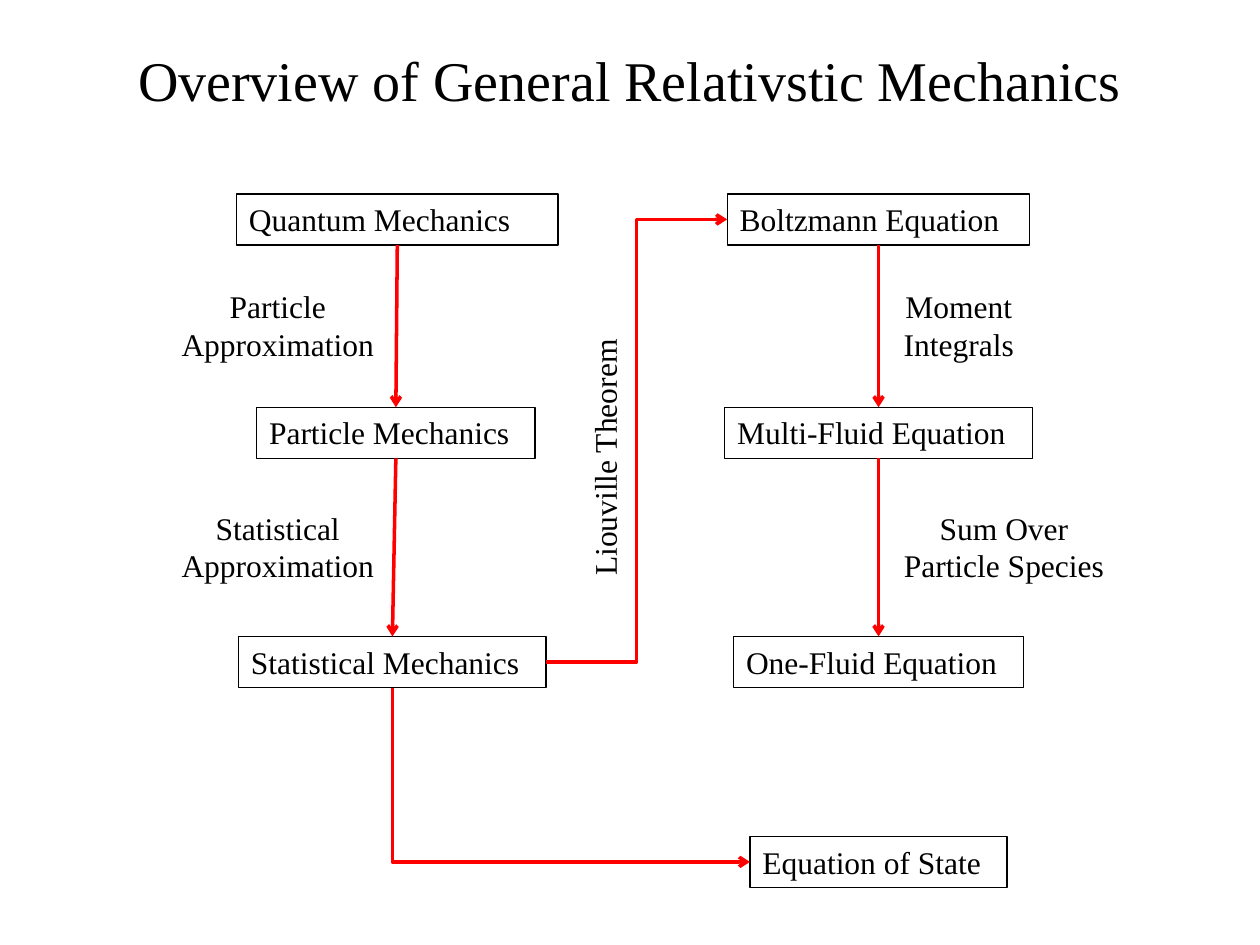
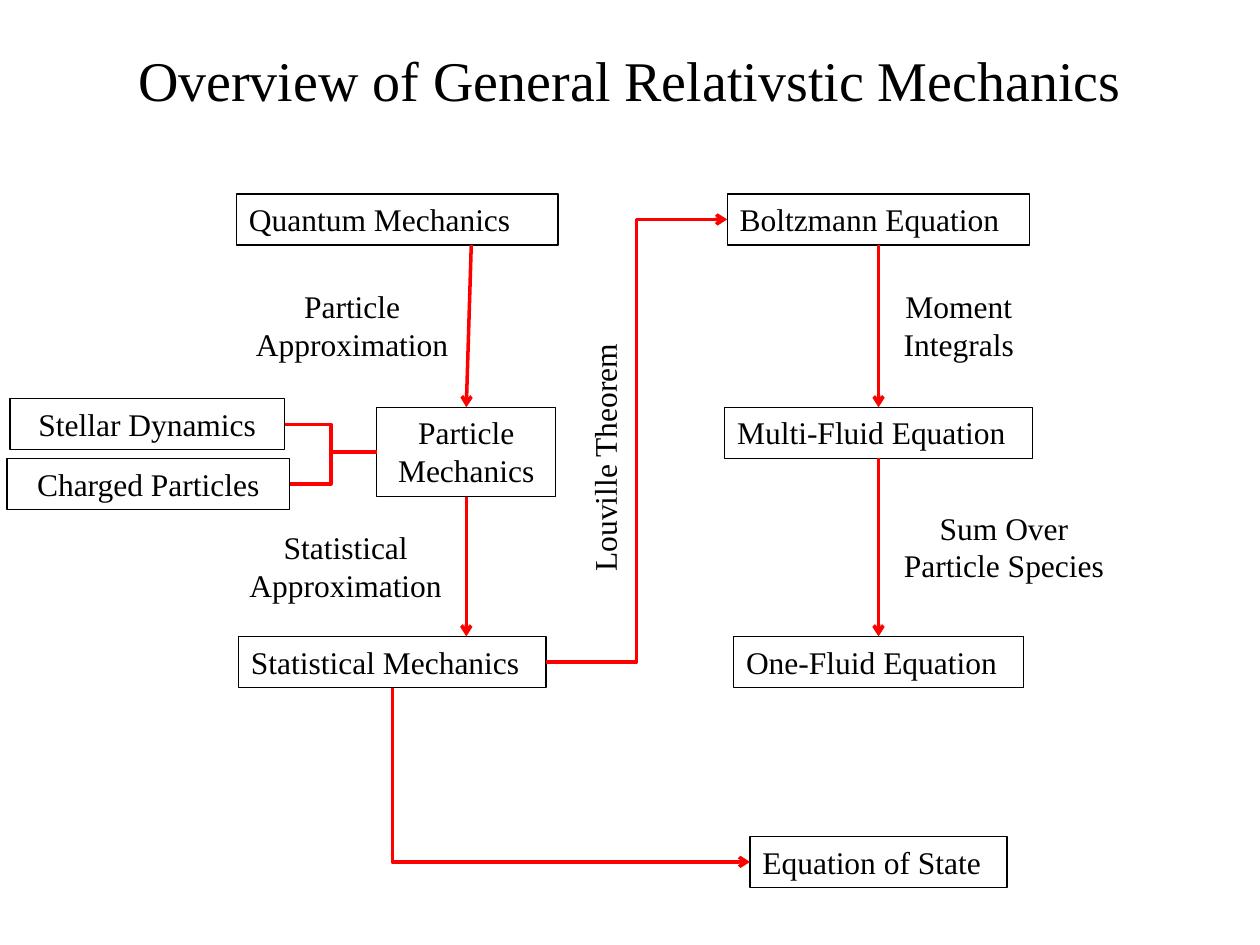
from dataclasses import dataclass

from lxml import etree
from pptx import Presentation, util as u
from pptx.dml.color import RGBColor
from pptx.enum import shapes, text
from pptx.oxml.ns import qn


@dataclass(frozen=True)
class Theme:
    ink: RGBColor = RGBColor(0, 0, 0)
    paper: RGBColor = RGBColor(255, 255, 255)
    arrow: RGBColor = RGBColor(255, 0, 0)
    font: str = "Times New Roman"
    title_size: u.Pt = u.Pt(32)
    body_size: u.Pt = u.Pt(18)
    border: u.Pt = u.Pt(0.75)
    arrow_width: u.Pt = u.Pt(2)


THEME = Theme()
TITLE = "Overview of General Relativstic Mechanics"
LEFT, CENTER = text.PP_ALIGN.LEFT, text.PP_ALIGN.CENTER

# Vertical grid and column centres, in centimetres
ROWS = dict(first=3.91, second=8.21, third=12.83, state=16.86)
NOTES = dict(upper=5.66, lower=10.13)
EQUATIONS_X = 17.71
ONE_LINE, TWO_LINES = 1.03, 1.8


def set_all(target, values):
    for name, value in values.items():
        setattr(target, name, value)


def write(frame, words, size, align, anchor=text.MSO_ANCHOR.TOP):
    frame.text = words
    set_all(frame, dict(word_wrap=True, auto_size=text.MSO_AUTO_SIZE.NONE,
                        vertical_anchor=anchor))
    for paragraph in frame.paragraphs:
        paragraph.alignment = align
        set_all(paragraph.font, dict(name=THEME.font, size=size, bold=False))
        paragraph.font.color.rgb = THEME.ink


def paint(shape, filled):
    if filled:
        shape.fill.solid()
        shape.fill.fore_color.rgb = THEME.paper
    else:
        shape.fill.background()


def add_title(slide):
    title = slide.shapes.title
    set_all(title, dict(left=u.Cm(1.27), top=u.Cm(0),
                        width=u.Cm(22.86), height=u.Cm(3.18)))
    write(title.text_frame, TITLE, THEME.title_size, CENTER, text.MSO_ANCHOR.MIDDLE)


def add_node(slide, words, center, top, width, height=ONE_LINE, align=LEFT, filled=False):
    """Bordered box of the flow chart, placed by its horizontal centre."""
    node = slide.shapes.add_shape(
        shapes.MSO_SHAPE.RECTANGLE,
        u.Cm(center - width / 2), u.Cm(top), u.Cm(width), u.Cm(height))
    node.shadow.inherit = False
    paint(node, filled)
    node.line.color.rgb = THEME.ink
    node.line.width = THEME.border
    write(node.text_frame, words, THEME.body_size, align)
    return node


def add_note(slide, words, center, top, width, height=TWO_LINES, rotation=0, filled=False):
    """Unbordered wording beside an arrow."""
    note = slide.shapes.add_textbox(
        u.Cm(center - width / 2), u.Cm(top), u.Cm(width), u.Cm(height))
    note.rotation = rotation
    paint(note, filled)
    write(note.text_frame, words, THEME.body_size, CENTER)


def add_link(slide, start, end, kind=shapes.MSO_CONNECTOR.STRAIGHT, head=True):
    link = slide.shapes.add_connector(kind, *start, *end)
    link.line.color.rgb = THEME.arrow
    link.line.width = THEME.arrow_width
    properties = link._element.spPr
    if head:
        etree.SubElement(properties.find(qn("a:ln")), qn("a:tailEnd"), type="arrow")
    etree.SubElement(properties, qn("a:effectLst"))
    return link


# Edge points of a node
def middle(node):
    return node.top + node.height // 2


def left_of(node):
    return node.left, middle(node)


def right_of(node):
    return node.left + node.width, middle(node)


def center_of(node):
    return node.left + node.width // 2


def add_step(slide, upper, lower, start_x=None, end_x=None):
    """Arrow down from one node to the next."""
    start_x = center_of(upper) if start_x is None else start_x
    end_x = center_of(lower) if end_x is None else end_x
    add_link(slide, (start_x, upper.top + upper.height), (end_x, lower.top))


def add_corner(slide, upper, target):
    """Arrow down from a node, then right to the target."""
    x0, y0 = center_of(upper), upper.top + upper.height
    x1, y1 = left_of(target)
    mid_x, mid_y = (x0 + x1) // 2, (y0 + y1) // 2
    half_w, half_h = (y1 - y0) // 2, (x1 - x0) // 2
    link = add_link(slide, (mid_x + half_w, mid_y - half_h),
                    (mid_x - half_w, mid_y + half_h), shapes.MSO_CONNECTOR.ELBOW)
    properties = link._element.spPr
    properties.find(qn("a:xfrm")).set("rot", str(270 * 60000))
    properties.find(qn("a:prstGeom")).set("prst", "bentConnector2")


def add_branch(slide, parent, child, bend_x):
    """Headless elbow from the left of a node to a special case of it."""
    start, end = left_of(parent), right_of(child)
    link = add_link(slide, start, end, shapes.MSO_CONNECTOR.ELBOW, head=False)
    bend = round(100000 * (start[0] - bend_x) / (start[0] - end[0]))
    geometry = link._element.spPr.find(qn("a:prstGeom"))
    adjustments = geometry.find(qn("a:avLst"))
    if adjustments is None:
        adjustments = etree.SubElement(geometry, qn("a:avLst"))
    etree.SubElement(adjustments, qn("a:gd"), name="adj1", fmla=f"val {bend}")


def add_overview(presentation, theorem, filled=False):
    """Slide with the parts that both overviews share."""
    slide = presentation.slides.add_slide(presentation.slide_layouts[5])
    add_title(slide)

    # Start and end of the mechanics column
    quantum = add_node(slide, "Quantum Mechanics", 8.01, ROWS["first"], 6.48)
    statistical = add_node(slide, "Statistical Mechanics", 7.91, ROWS["third"], 6.2)

    # Equations column
    boltzmann = add_node(slide, "Boltzmann Equation", EQUATIONS_X, ROWS["first"], 6.1)
    multi_fluid = add_node(slide, "Multi-Fluid Equation", EQUATIONS_X, ROWS["second"],
                           6.2, filled=filled)
    one_fluid = add_node(slide, "One-Fluid Equation", EQUATIONS_X, ROWS["third"],
                         5.84, filled=filled)
    state = add_node(slide, "Equation of State", EQUATIONS_X, ROWS["state"], 5.18)
    add_step(slide, boltzmann, multi_fluid)
    add_step(slide, multi_fluid, one_fluid)
    add_note(slide, "Moment\nIntegrals", 19.33, NOTES["upper"], 2.95, filled=filled)
    add_note(slide, "Sum Over\nParticle Species", 20.24, NOTES["lower"], 4.78, filled=filled)

    # Links between the columns
    add_corner(slide, statistical, state)
    add_link(slide, right_of(statistical), left_of(boltzmann), shapes.MSO_CONNECTOR.ELBOW)
    add_note(slide, theorem, 12.19, 8.71, 6.4, ONE_LINE, rotation=270)
    return slide, quantum, statistical


def add_approximations(slide, particle_x, statistical_x, statistical_top):
    add_note(slide, "Particle\nApproximation", particle_x, NOTES["upper"], 4.65)
    add_note(slide, "Statistical\nApproximation", statistical_x, statistical_top, 4.65)


def build_general(presentation):
    slide, quantum, statistical = add_overview(presentation, "Liouville Theorem")
    particle = add_node(slide, "Particle Mechanics", 7.98, ROWS["second"], 5.61)
    add_step(slide, quantum, particle)
    add_step(slide, particle, statistical)
    add_approximations(slide, 5.6, 5.6, NOTES["lower"])


def build_particle_cases(presentation):
    slide, quantum, statistical = add_overview(presentation, "Louville Theorem", filled=True)
    particle = add_node(slide, "Particle Mechanics", 9.4, ROWS["second"], 3.61,
                        TWO_LINES, CENTER)
    add_step(slide, quantum, particle, start_x=u.Cm(9.5))
    add_step(slide, particle, statistical, end_x=center_of(particle))
    add_approximations(slide, 7.1, 6.97, 10.52)

    # Special cases of particle mechanics
    for words, center, top, width in (("Stellar Dynamics", 2.97, 8.04, 5.54),
                                      ("Charged Particles", 2.99, 9.24, 5.7)):
        case = add_node(slide, words, center, top, width, align=CENTER)
        add_branch(slide, particle, case, u.Cm(6.67))


def main():
    presentation = Presentation()
    set_all(presentation, dict(slide_width=u.Cm(25.4), slide_height=u.Cm(19.05)))
    build_general(presentation)
    build_particle_cases(presentation)
    presentation.save("out.pptx")


if __name__ == "__main__":
    main()
